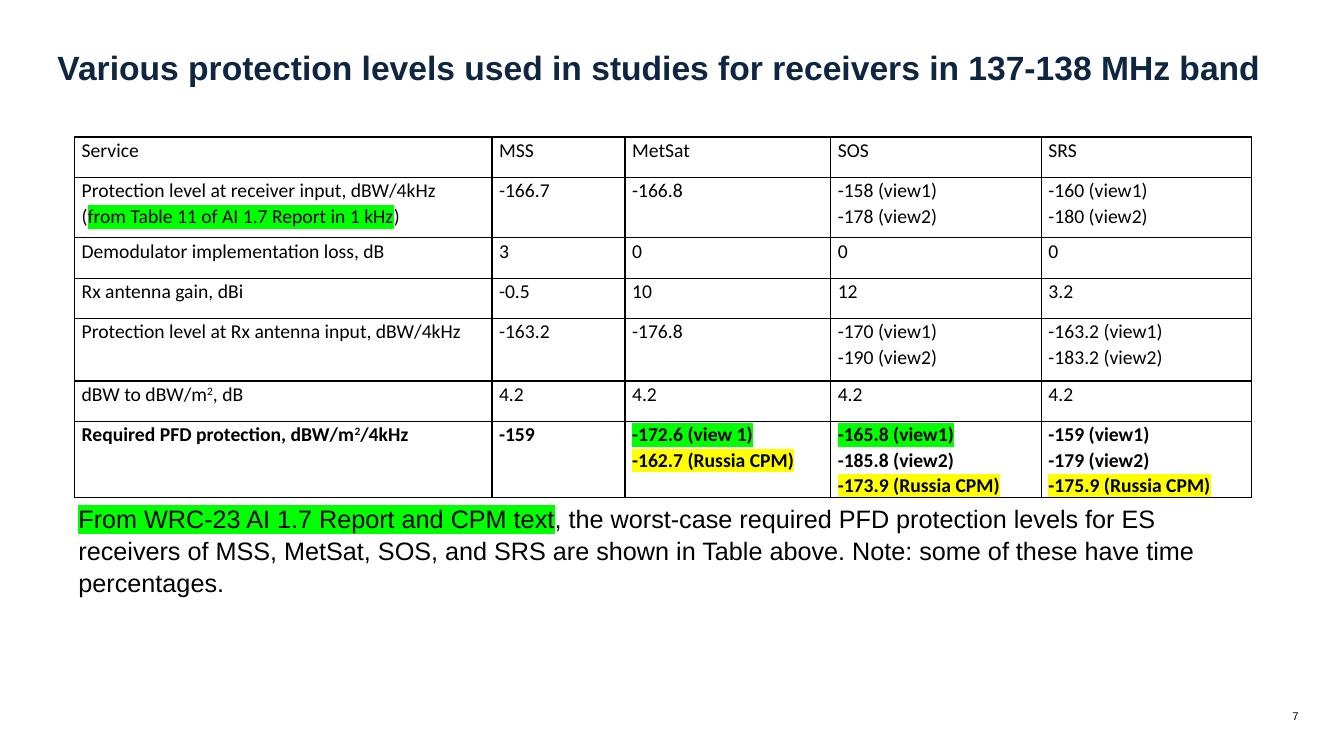
from dataclasses import dataclass

from lxml.etree import SubElement
from pptx import Presentation
from pptx.dml.color import RGBColor
from pptx.enum.text import MSO_ANCHOR, MSO_AUTO_SIZE, PP_ALIGN
from pptx.oxml import parse_xml
from pptx.oxml.ns import nsdecls, qn
from pptx.slide import Slide
from pptx.table import _Cell as Cell
from pptx.text.text import TextFrame, _Paragraph as Paragraph
from pptx.util import Inches, Pt

BLACK = RGBColor(0x00, 0x00, 0x00)
NAVY = RGBColor(0x0E, 0x26, 0x41)
GREEN = RGBColor(0x00, 0xFF, 0x00)
YELLOW = RGBColor(0xFF, 0xFF, 0x00)


@dataclass(frozen=True)
class Style:
    font: str
    size: float
    color: RGBColor = BLACK
    bold: bool = False


@dataclass(frozen=True)
class Span:
    text: str
    highlight: RGBColor | None = None
    raised: bool = False


@dataclass(frozen=True)
class Row:
    height: float
    cells: list[list[list[Span]]]
    bold: bool = False


TITLE = Style("Arial", 24, NAVY, True)
NOTE = Style("Arial", 18)
PAGE_NUMBER = Style("Arial", 8)


def line(text: str, highlight: RGBColor | None = None) -> list[Span]:
    return [Span(text, highlight)]


def lines(*texts: str) -> list[list[Span]]:
    return [line(text) for text in texts]


SQUARED = Span("2", raised=True)
COLUMN_WIDTHS = [4.14, 1.32, 2.04, 2.09, 2.08]
ROWS = [
    Row(0.4, [lines(name) for name in ("Service", "MSS", "MetSat", "SOS", "SRS")]),
    Row(0.6, [
        [line("Protection level at receiver input, dBW/4kHz"),
         [Span("("), Span("from Table 11 of AI 1.7 Report in 1 kHz", GREEN), Span(")")]],
        lines("-166.7"),
        lines("-166.8"),
        lines("-158 (view1)", "-178 (view2)"),
        lines("-160 (view1)", "-180 (view2)"),
    ]),
    Row(0.4, [lines(text) for text in ("Demodulator implementation loss, dB", "3", "0", "0", "0")]),
    Row(0.4, [lines(text) for text in ("Rx antenna gain, dBi", "-0.5", "10", "12", "3.2")]),
    Row(0.62, [
        lines("Protection level at Rx antenna input, dBW/4kHz"),
        lines("-163.2"),
        lines("-176.8"),
        lines("-170 (view1)", "-190 (view2)"),
        lines("-163.2 (view1)", "-183.2 (view2)"),
    ]),
    Row(0.4, [[[Span("dBW to dBW/m"), SQUARED, Span(", dB")]]] + [lines("4.2")] * 4),
    Row(0.58, [
        [[Span("Required PFD protection, dBW/m"), SQUARED, Span("/4kHz")]],
        lines("-159"),
        [line("-172.6 (view 1)", GREEN), line("-162.7 (Russia CPM)", YELLOW)],
        [line("-165.8 (view1)", GREEN), line("-185.8 (view2)"),
         line("-173.9 (Russia CPM)", YELLOW)],
        [line("-159 (view1)"), line("-179 (view2)"), line("-175.9 (Russia CPM)", YELLOW)],
    ], bold=True),
]


def write_spans(para: Paragraph, spans: list[Span], style: Style) -> None:
    for span in spans:
        run = para.add_run()
        run.text = span.text
        run.font.size = Pt(style.size)
        run.font.bold = style.bold
        run.font.color.rgb = style.color
        properties = run.font._element
        if span.raised:
            properties.set("baseline", "30000")
        if span.highlight is not None:
            highlight = SubElement(properties, qn("a:highlight"))
            SubElement(highlight, qn("a:srgbClr"), val=str(span.highlight))
        run.font.name = style.font


def write_lines(frame: TextFrame, content: list[list[Span]], style: Style,
                spacing: float = 1.07) -> None:
    for index, spans in enumerate(content):
        para = frame.add_paragraph() if index else frame.paragraphs[0]
        para.line_spacing = spacing
        write_spans(para, spans, style)


def outline_cell(cell: Cell) -> None:
    properties = cell._tc.get_or_add_tcPr()
    for index, side in enumerate("LRTB"):
        properties.insert(index, parse_xml(
            f'<a:ln{side} {nsdecls("a")} w="{Pt(1)}"><a:solidFill>'
            f'<a:srgbClr val="{BLACK}"/></a:solidFill></a:ln{side}>'))


def add_title(page: Slide) -> None:
    title = page.shapes.title
    title.left, title.top = Inches(0.47), Inches(0.32)
    title.width, title.height = Inches(12.4), Inches(0.6)
    frame = title.text_frame
    frame.auto_size = MSO_AUTO_SIZE.NONE
    frame.vertical_anchor = MSO_ANCHOR.BOTTOM
    write_lines(frame, lines("Various protection levels used in studies for receivers "
                             "in 137-138 MHz band"), TITLE, 0.9)
    frame.paragraphs[0].alignment = PP_ALIGN.LEFT


def add_protection_table(page: Slide) -> None:
    table = page.shapes.add_table(
        len(ROWS), len(COLUMN_WIDTHS), Inches(0.74), Inches(1.36),
        Inches(sum(COLUMN_WIDTHS)), Inches(sum(row.height for row in ROWS))).table
    table.first_row = table.horz_banding = False
    for column, width in zip(table.columns, COLUMN_WIDTHS):
        column.width = Inches(width)
    for table_row, row in zip(table.rows, ROWS):
        table_row.height = Inches(row.height)
        style = Style("Calibri", 14, bold=row.bold)
        for cell, content in zip(table_row.cells, row.cells):
            cell.margin_left = cell.margin_right = Inches(0.07)
            cell.margin_top = cell.margin_bottom = 0
            cell.fill.background()
            outline_cell(cell)
            write_lines(cell.text_frame, content, style)


def add_note(page: Slide) -> None:
    box = page.shapes.add_textbox(Inches(0.68), Inches(4.92), Inches(11.67), Inches(1.05))
    frame = box.text_frame
    frame.word_wrap = True
    frame.auto_size = MSO_AUTO_SIZE.SHAPE_TO_FIT_TEXT
    write_lines(frame, [[
        Span("From WRC-23 AI 1.7 Report and CPM text", GREEN),
        Span(", the worst-case required PFD protection levels for ES receivers of MSS, "
             "MetSat, SOS, and SRS are shown in Table above. Note: some of these have "
             "time percentages."),
    ]], NOTE)
    frame.paragraphs[0].space_after = Pt(8)


def add_page_number(page: Slide) -> None:
    box = page.shapes.add_textbox(Inches(12.2), Inches(7), Inches(0.68), Inches(0.2))
    frame = box.text_frame
    frame.word_wrap = True
    frame.margin_left = frame.margin_right = frame.margin_top = frame.margin_bottom = 0
    frame.vertical_anchor = MSO_ANCHOR.MIDDLE
    write_lines(frame, lines("7"), PAGE_NUMBER, 1.0)
    frame.paragraphs[0].alignment = PP_ALIGN.RIGHT


def main() -> None:
    deck = Presentation()
    deck.slide_width, deck.slide_height = Inches(13.33), Inches(7.5)
    page = deck.slides.add_slide(deck.slide_layouts.get_by_name("Title Only"))
    add_title(page)
    add_protection_table(page)
    add_note(page)
    add_page_number(page)
    deck.save("out.pptx")


if __name__ == "__main__":
    main()
